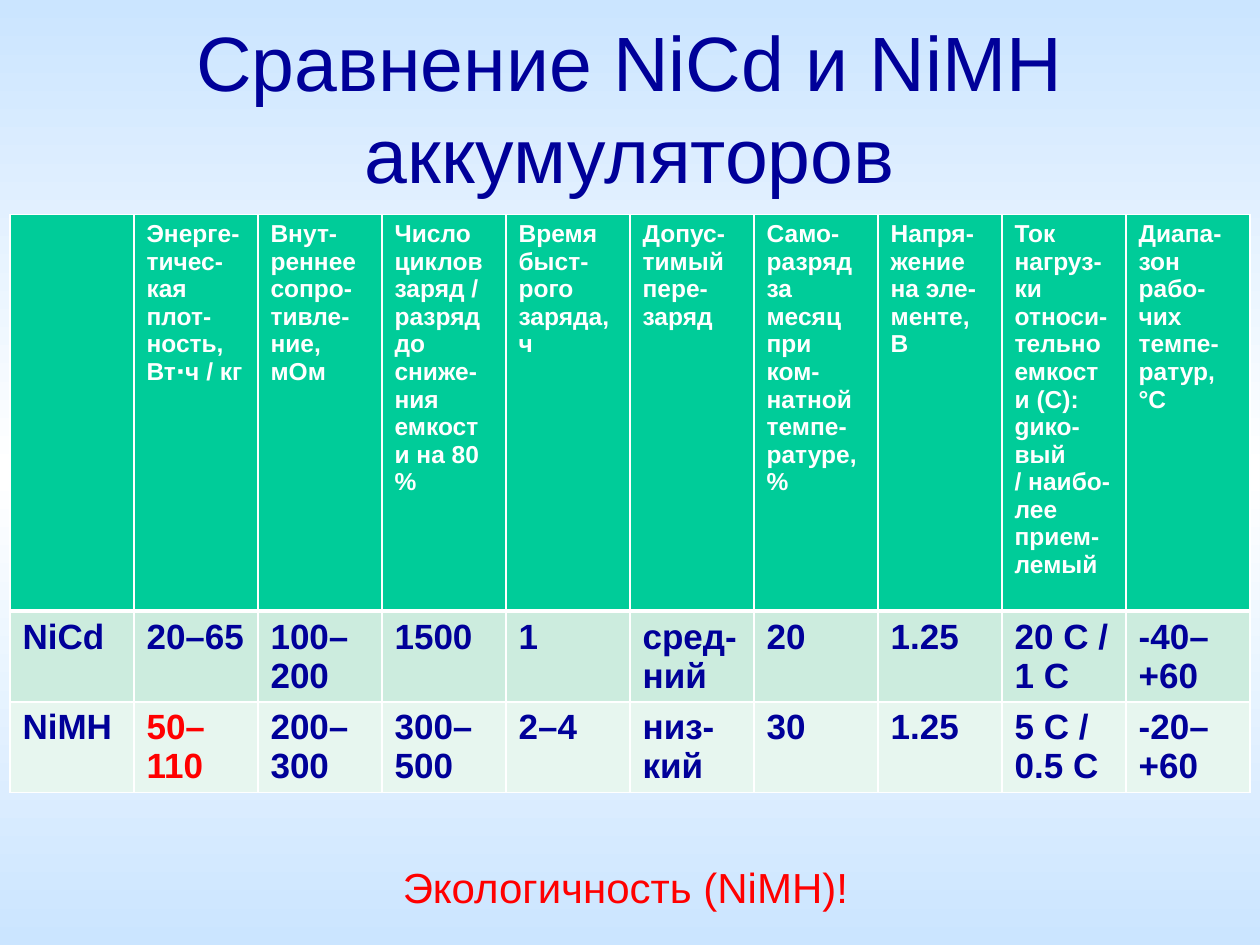
from copy import deepcopy

from lxml.etree import SubElement
from pptx import Presentation
from pptx.dml.color import RGBColor
from pptx.enum.text import MSO_ANCHOR, MSO_AUTO_SIZE, PP_ALIGN
from pptx.oxml.ns import qn
from pptx.util import Cm, Pt

TITLE = "Сравнение NiCd и NiMH аккумуляторов"
NOTE = "Экологичность (NiMH)!"
HEADER = [
    "",
    "Энерге-тичес-кая плот-ность, Вт⋅ч / кг",
    "Внут-реннее сопро-тивле-ние, мОм",
    "Число циклов заряд / разряд до сниже-ния емкости на 80 %",
    "Время быст-рого заряда, ч",
    "Допус-тимый пере-заряд",
    "Само-разряд за месяц при ком-натной темпе-ратуре, %",
    "Напря-жение на эле-менте, В",
    "Ток нагруз-ки относи-тельно емкости (С):\ngико-вый\n/ наибо-лее прием-лемый",
    "Диапа-зон рабо-чих темпе-ратур, °С",
]
NICD = ["NiCd", "20–65", "100–200", "1500", "1", "cред-ний", "20", "1.25",
        "20 С /\n1 C", "-40–+60"]
NIMH = ["NiMH", "50–110", "200–300", "300–500", "2–4", "низ-кий", "30", "1.25",
        "5 C / 0.5 C", "-20–+60"]
NAVY, RED, WHITE, SKY = "000099", "FF0000", "FFFFFF", "CBE5FF"
ROWS = [
    {"texts": HEADER, "height": 8, "fill": "00CC99", "color": WHITE, "size": 14},
    {"texts": NICD, "height": 1.83, "fill": "CCECDE", "color": NAVY, "size": 20},
    {"texts": NIMH, "height": 1.83, "fill": "E7F6EF", "color": NAVY, "size": 20},
]
HIGHLIGHTED = {"50–110"}


def color_of(hex_string):
    return RGBColor.from_string(hex_string)


def write(text_frame, text, size, color, bold=False, align=PP_ALIGN.LEFT):
    for index, line in enumerate(text.split("\n")):
        paragraph = text_frame.add_paragraph() if index else text_frame.paragraphs[0]
        paragraph.alignment = align
        run = paragraph.add_run()
        run.text = line
        run.font.name = "Arial"
        run.font.size = Pt(size)
        run.font.bold = bold
        run.font.color.rgb = color_of(color)


def add_borders(cell, widths):
    properties = cell._tc.get_or_add_tcPr()
    for side, width in widths.items():
        line = SubElement(properties, qn(f"a:ln{side}"), w=str(Pt(width)))
        SubElement(SubElement(line, qn("a:solidFill")), qn("a:srgbClr"), val=WHITE)


def paint_background(slide):
    fill = slide.background.fill
    fill.gradient()
    fill.gradient_angle = 90
    stop_list = slide._element.find(".//" + qn("a:gsLst"))
    stop_list.append(deepcopy(stop_list[0]))
    for stop, color, position in zip(fill.gradient_stops, (SKY, WHITE, SKY), (0, 0.5, 1)):
        stop.color.rgb = color_of(color)
        stop.position = position


def add_title(slide):
    title = slide.shapes.title
    title.left, title.top, title.width, title.height = Cm(1.9), Cm(0.56), Cm(21.6), Cm(3.18)
    frame = title.text_frame
    frame.auto_size = MSO_AUTO_SIZE.NONE
    frame.vertical_anchor = MSO_ANCHOR.MIDDLE
    write(frame, TITLE, 44, NAVY, align=PP_ALIGN.CENTER)


def add_comparison(slide):
    height = sum(row["height"] for row in ROWS)
    table = slide.shapes.add_table(
        len(ROWS), len(HEADER), Cm(0.2), Cm(4.32), Cm(25), Cm(height)).table
    for row_index, row in enumerate(ROWS):
        table.rows[row_index].height = Cm(row["height"])
        top, bottom = (3 if row_index == 1 else 1), (3 if row_index == 0 else 1)
        for column_index, text in enumerate(row["texts"]):
            cell = table.cell(row_index, column_index)
            add_borders(cell, {"L": 1, "R": 1, "T": top, "B": bottom})
            cell.fill.solid()
            cell.fill.fore_color.rgb = color_of(row["fill"])
            if text:
                color = RED if text in HIGHLIGHTED else row["color"]
                write(cell.text_frame, text, row["size"], color, bold=True)


def add_note(slide):
    frame = slide.shapes.add_textbox(Cm(7.87), Cm(17.25), Cm(9.58), Cm(1.27)).text_frame
    frame.word_wrap = False
    frame.auto_size = MSO_AUTO_SIZE.SHAPE_TO_FIT_TEXT
    write(frame, NOTE, 24, RED)


def main():
    """Build the slide comparing NiCd and NiMH batteries."""
    presentation = Presentation()
    presentation.slide_width, presentation.slide_height = Cm(25.4), Cm(19.05)
    slide = presentation.slides.add_slide(presentation.slide_layouts[5])
    paint_background(slide)
    add_title(slide)
    add_comparison(slide)
    add_note(slide)
    presentation.save("out.pptx")


if __name__ == "__main__":
    main()
